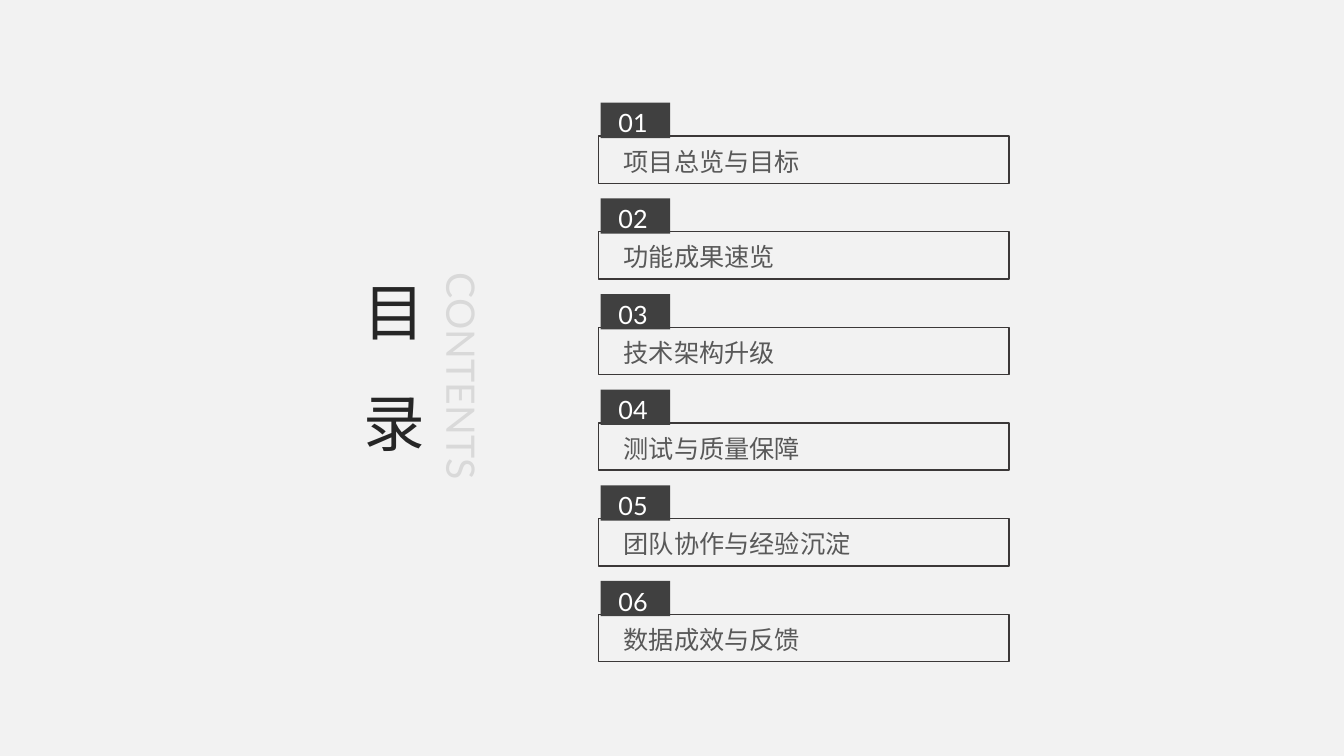
from lxml import etree
from pptx import Presentation
from pptx import util as u
from pptx.dml.color import RGBColor
from pptx.enum import shapes, text
from pptx.oxml.ns import qn

FONT = "Lato"
CHAPTERS = ["项目总览与目标", "功能成果速览", "技术架构升级",
            "测试与质量保障", "团队协作与经验沉淀", "数据成效与反馈"]
FIRST_TOP, PITCH = 2.59, 2.41


def rgb(value):
    return RGBColor.from_string(value)


def write(shape, words, size, color, align=text.PP_ALIGN.LEFT,
          anchor=text.MSO_ANCHOR.TOP, insets=(0.25, 0.13, 0.25, 0.13), spacing=None):
    """Fill a shape with one paragraph; insets are left, top, right, bottom in cm."""
    frame = shape.text_frame
    frame.word_wrap = True
    frame.auto_size = text.MSO_AUTO_SIZE.NONE
    frame.vertical_anchor = anchor
    (frame.margin_left, frame.margin_top,
     frame.margin_right, frame.margin_bottom) = map(u.Cm, insets)
    paragraph = frame.paragraphs[0]
    paragraph.alignment = align
    paragraph.line_spacing = spacing
    run = paragraph.add_run()
    run.text = words
    run.font.size = u.Pt(size)
    run.font.name = FONT
    run.font.color.rgb = rgb(color)
    # East Asian glyphs follow the same typeface
    etree.SubElement(run.font._element, qn("a:ea"), typeface=FONT)


prs = Presentation()
prs.slide_width, prs.slide_height = u.Cm(33.87), u.Cm(19.05)
slide = prs.slides.add_slide(prs.slide_layouts[5])
slide.background.fill.solid()
slide.background.fill.fore_color.rgb = rgb("F2F2F2")

heading = slide.shapes.title
heading.left, heading.top = u.Cm(8.92), u.Cm(5.84)
heading.width, heading.height = u.Cm(3.33), u.Cm(6.27)
write(heading, "目录", 44, "262626", align=text.PP_ALIGN.JUSTIFY, spacing=1.5)

subheading = slide.shapes.add_textbox(u.Cm(10.92), u.Cm(6.63), u.Cm(1.45), u.Cm(6.1))
write(subheading, "CONTENTS", 28, "D9D9D9", insets=(0.13, 0.25, 0.13, 0.25))
subheading.element.txBody.bodyPr.set("vert", "vert")

for index, chapter in enumerate(CHAPTERS):
    top = FIRST_TOP + index * PITCH

    frame_box = slide.shapes.add_shape(
        shapes.MSO_SHAPE.RECTANGLE, u.Cm(15.09), u.Cm(top + 0.84), u.Cm(10.34), u.Cm(1.19))
    frame_box.shadow.inherit = False
    frame_box.fill.background()
    frame_box.line.color.rgb = rgb("3B3838")
    frame_box.line.width = u.Pt(1)
    write(frame_box, chapter, 18, "595959", anchor=text.MSO_ANCHOR.MIDDLE,
          insets=(0.63, 0.2, 0.25, 0.13))

    number_tag = slide.shapes.add_shape(
        shapes.MSO_SHAPE.RECTANGLE, u.Cm(15.14), u.Cm(top), u.Cm(1.75), u.Cm(0.89))
    number_tag.shadow.inherit = False
    number_tag.fill.solid()
    number_tag.fill.fore_color.rgb = rgb("404040")
    number_tag.line.fill.background()
    write(number_tag, f"{index + 1:02}", 18, "FFFFFF", align=text.PP_ALIGN.CENTER,
          anchor=text.MSO_ANCHOR.MIDDLE, insets=(0.13, 0.25, 0.25, 0.13))

prs.save("out.pptx")
